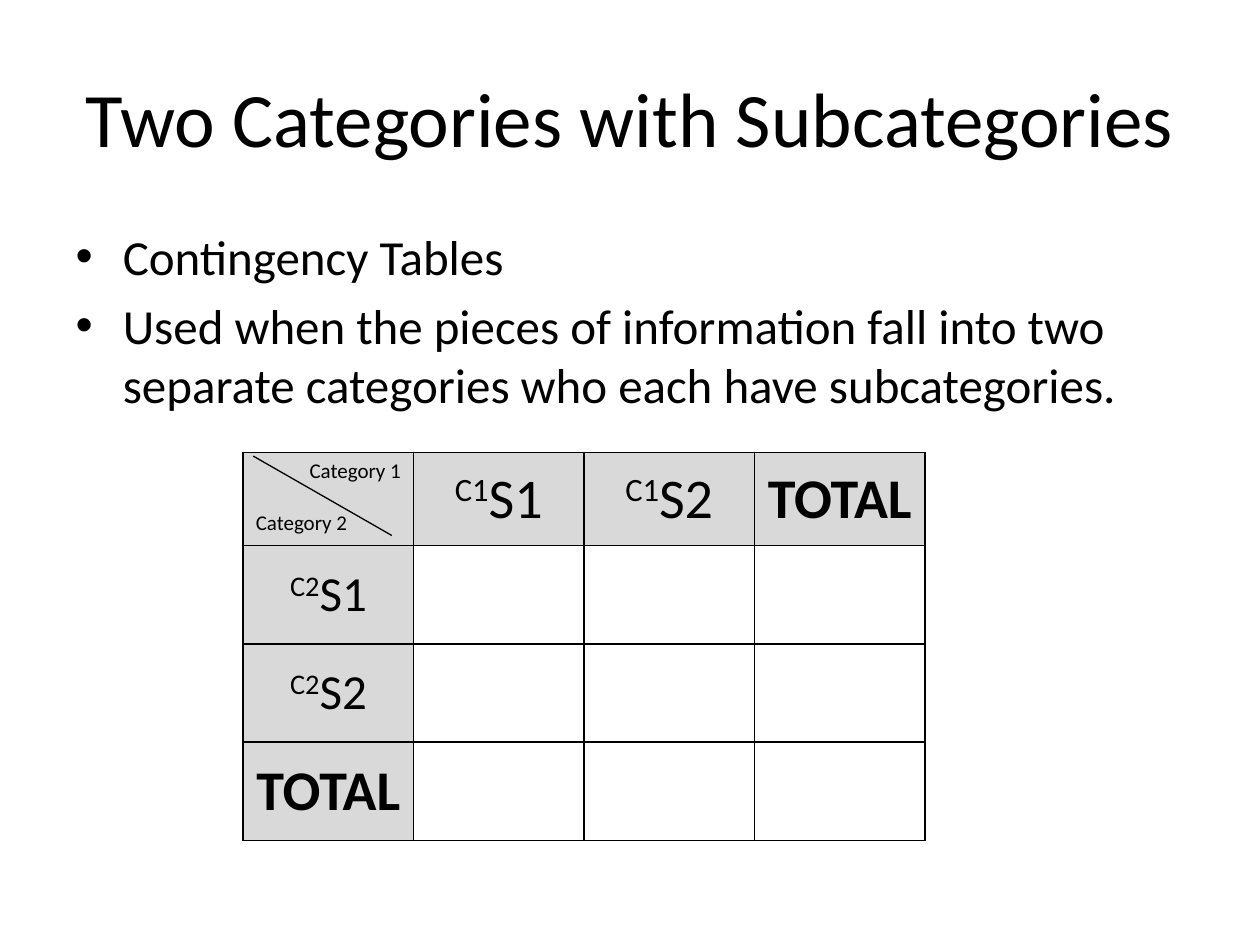
from dataclasses import dataclass

from lxml import etree
from pptx import Presentation
from pptx import util as u
from pptx.dml.color import RGBColor
from pptx.enum import shapes, text
from pptx.oxml import parse_xml
from pptx.oxml.ns import qn

WIDTH, HEIGHT = 10, 7.5
DRAWING_NS = "http://schemas.openxmlformats.org/drawingml/2006/main"


@dataclass(frozen=True)
class Theme:
    font: str = "Calibri"
    ink: str = "000000"
    header: str = "D9D9D9"
    paper: str = "FFFFFF"
    title: int = 44
    body: int = 28
    column_head: int = 32
    row_head: int = 28
    total: int = 32
    corner: int = 12
    border: float = 1
    diagonal: float = 0.75


THEME = Theme()
CENTER, RIGHT, LEFT = text.PP_ALIGN.CENTER, text.PP_ALIGN.RIGHT, text.PP_ALIGN.LEFT

# Table grid
TABLE_LEFT, TABLE_TOP = 1.93, 3.59
COLUMN_WIDTH = 1.353
ROW_HEIGHTS = [0.74, 0.78, 0.78, 0.78]


def write(paragraph, words, size, bold=None, align=None, raised=0, before=None):
    """Add a run; raised is the superscript offset in percent."""
    run = paragraph.add_run()
    run.text = words
    run.font.name = THEME.font
    run.font.size = u.Pt(size)
    run.font.bold = bold
    run.font.color.rgb = RGBColor.from_string(THEME.ink)
    if raised:
        run._r.get_or_add_rPr().set("baseline", str(raised * 1000))
    if align is not None:
        paragraph.alignment = align
    if before is not None:
        paragraph.space_before = u.Pt(before)


def place(shape, left, top, width, height):
    """Position a shape by shares of the slide's size."""
    shape.left, shape.width = (u.Inches(WIDTH * share) for share in (left, width))
    shape.top, shape.height = (u.Inches(HEIGHT * share) for share in (top, height))


def next_paragraph(frame, index):
    return frame.paragraphs[0] if index == 0 else frame.add_paragraph()


def add_bullets(body, lines):
    for index, line in enumerate(lines):
        write(next_paragraph(body.text_frame, index), line, THEME.body)


def style_cell(cell, fill):
    """Fill a cell and border it on all four sides."""
    cell.fill.solid()
    cell.fill.fore_color.rgb = RGBColor.from_string(fill)
    cell.vertical_anchor = text.MSO_ANCHOR.MIDDLE
    properties = cell._tc.get_or_add_tcPr()
    for index, side in enumerate("LRTB"):
        properties.insert(index, parse_xml(
            f'<a:ln{side} xmlns:a="{DRAWING_NS}" w="{u.Pt(THEME.border)}">'
            f'<a:solidFill><a:srgbClr val="{THEME.ink}"/></a:solidFill></a:ln{side}>'))


def write_heading(cell, prefix, label, size):
    """Centred heading: raised category prefix, or a bold total without one."""
    paragraph = cell.text_frame.paragraphs[0]
    if prefix:
        write(paragraph, prefix, size, bold=False, raised=30)
    write(paragraph, label, size, bold=not prefix, align=CENTER)


def add_contingency_table(slide, subcategories):
    count = len(ROW_HEIGHTS)
    table = slide.shapes.add_table(
        count, count, u.Inches(TABLE_LEFT), u.Inches(TABLE_TOP),
        u.Inches(COLUMN_WIDTH * count), u.Inches(sum(ROW_HEIGHTS))).table
    table.first_row = table.horz_banding = False
    for column in table.columns:
        column.width = u.Inches(COLUMN_WIDTH)
    for row, height in zip(table.rows, ROW_HEIGHTS):
        row.height = u.Inches(height)
    for r in range(count):
        for c in range(count):
            style_cell(table.cell(r, c), THEME.paper if r and c else THEME.header)

    # Subcategory headings, then the totals
    for index, label in enumerate(subcategories, 1):
        write_heading(table.cell(0, index), "C1", label, THEME.column_head)
        write_heading(table.cell(index, 0), "C2", label, THEME.row_head)
    for cell in (table.cell(0, count - 1), table.cell(count - 1, 0)):
        write_heading(cell, "", "TOTAL", THEME.total)

    # Corner cell names both categories
    corner = table.cell(0, 0)
    corner.vertical_anchor = text.MSO_ANCHOR.TOP
    names = [("Category 1", RIGHT, 0), ("Category 2", LEFT, 15)]
    for index, (name, align, before) in enumerate(names):
        write(next_paragraph(corner.text_frame, index), name, THEME.corner,
              align=align, before=before)


def add_corner_diagonal(slide):
    diagonal = slide.shapes.add_connector(
        shapes.MSO_CONNECTOR.STRAIGHT,
        u.Inches(TABLE_LEFT + 1.18), u.Inches(TABLE_TOP + 0.66),
        u.Inches(TABLE_LEFT + 0.08), u.Inches(TABLE_TOP + 0.03))
    diagonal.line.color.rgb = RGBColor.from_string(THEME.ink)
    diagonal.line.width = u.Pt(THEME.diagonal)
    etree.SubElement(diagonal._element.spPr, qn("a:effectLst"))


def main():
    deck = Presentation()
    deck.slide_width, deck.slide_height = u.Inches(WIDTH), u.Inches(HEIGHT)
    slide = deck.slides.add_slide(deck.slide_layouts[1])

    # Title and explanation
    title, body = slide.placeholders
    place(title, 0.05, 0.04, 0.9, 1 / 6)
    write(title.text_frame.paragraphs[0], "Two Categories with Subcategories",
          THEME.title, align=CENTER)
    place(body, 0.05, 0.233, 0.875, 0.245)
    add_bullets(body, [
        "Contingency Tables",
        "Used when the pieces of information fall into two separate categories "
        "who each have subcategories.",
    ])

    # Blank contingency table
    add_contingency_table(slide, ["S1", "S2"])
    add_corner_diagonal(slide)
    deck.save("out.pptx")


if __name__ == "__main__":
    main()
